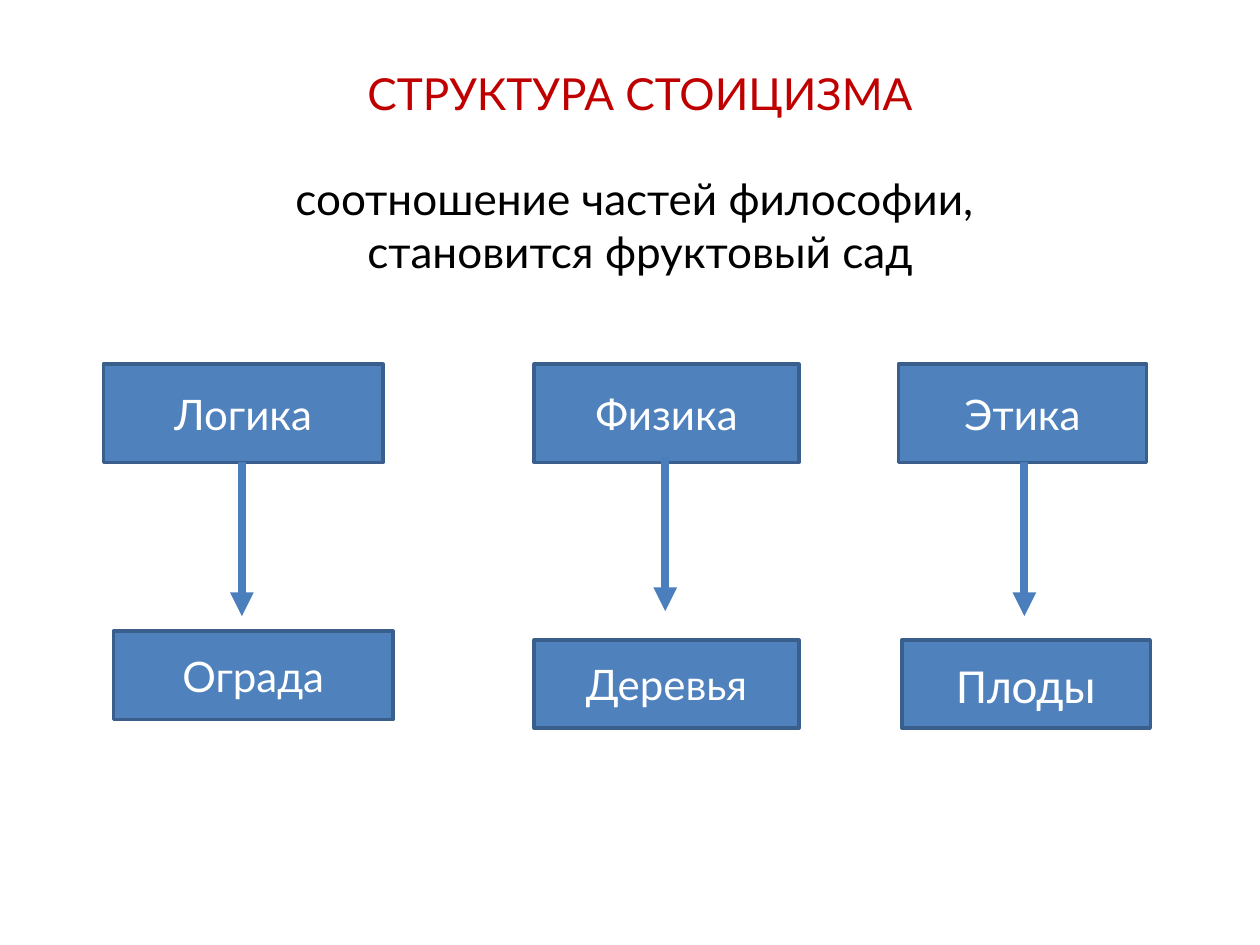
from lxml.etree import SubElement
from pptx import Presentation
from pptx.dml.color import RGBColor
from pptx.enum.shapes import MSO_CONNECTOR, MSO_SHAPE
from pptx.enum.text import MSO_ANCHOR, PP_ALIGN
from pptx.oxml.ns import qn
from pptx.util import Inches, Pt

COLUMNS, ROWS = 100, 75
WIDTH, HEIGHT = Inches(10), Inches(7.5)


def across(columns):
    """Turn grid columns into a horizontal length."""
    return round(WIDTH * columns / COLUMNS)


def down(rows):
    """Turn grid rows into a vertical length."""
    return round(HEIGHT * rows / ROWS)


def place(left, top, width, height):
    """Turn a grid rectangle into slide lengths."""
    return across(left), down(top), across(width), down(height)


def color(hex_code):
    """Turn a hex string into a colour."""
    return RGBColor.from_string(hex_code)


def write(paragraph, text, size=24, font="Lato", fill="FFFFFF", before=0):
    """Fill a centred paragraph with formatted text."""
    paragraph.alignment = PP_ALIGN.CENTER
    paragraph.space_before = Pt(before)
    paragraph.text = text
    for run in paragraph.runs:
        run.font.size = Pt(size)
        run.font.name = font
        run.font.color.rgb = color(fill)


def add_heading(slide):
    """Add the red title with its black subtitle."""
    frame = slide.shapes.add_textbox(*place(7.2, 4.7, 87.2, 17.9)).text_frame
    frame.word_wrap = True
    frame.vertical_anchor = MSO_ANCHOR.MIDDLE
    write(frame.paragraphs[0], "СТРУКТУРА СТОИЦИЗМА", size=25.2, fill="C00000")
    write(frame.add_paragraph(),
          "соотношение частей философии, \vстановится фруктовый сад",
          size=25.2, fill="000000", before=30)


def add_box(slide, text, left, top, width, height, **text_format):
    """Add a blue labelled rectangle."""
    shape = slide.shapes.add_shape(
        MSO_SHAPE.RECTANGLE, *place(left, top, width, height))
    shape.shadow.inherit = False
    shape.fill.solid()
    shape.fill.fore_color.rgb = color("4F81BD")
    shape.line.color.rgb = color("3A5F8C")
    shape.line.width = Pt(2)
    shape.text_frame.vertical_anchor = MSO_ANCHOR.MIDDLE
    write(shape.text_frame.paragraphs[0], text, **text_format)


def add_arrow(slide, column, top, length=12.2):
    """Add a thick arrow pointing down."""
    connector = slide.shapes.add_connector(
        MSO_CONNECTOR.STRAIGHT, across(column), down(top),
        across(column), down(top + length))
    connector.line.color.rgb = color("4B7EBC")
    connector.line.width = Pt(4.5)
    SubElement(connector.line._get_or_add_ln(), qn("a:tailEnd"), type="triangle")
    SubElement(connector._element.spPr, qn("a:effectLst"))


def main():
    """Build the slide and save it."""
    presentation = Presentation()
    presentation.slide_width, presentation.slide_height = WIDTH, HEIGHT
    slide = presentation.slides.add_slide(presentation.slide_layouts[6])
    add_heading(slide)
    parts = [
        ("Логика", 8.2, 22.2, 19.2, 36.7, "Ограда", 9, 50.1, {}),
        ("Физика", 42.4, 21, 52.8, 36.3, "Деревья", 42.4, 50.8, {}),
        ("Этика", 71.3, 19.7, 81.3, 36.7, "Плоды", 71.6, 50.8,
         {"size": 28, "font": "Calibri"}),
    ]
    for part, left, width, column, start, image, image_left, image_top, style in parts:
        add_box(slide, part, left, 28.9, width, 7.8)
        add_box(slide, image, image_left, image_top, width, 7, **style)
        add_arrow(slide, column, start)
    presentation.save("out.pptx")


if __name__ == "__main__":
    main()
